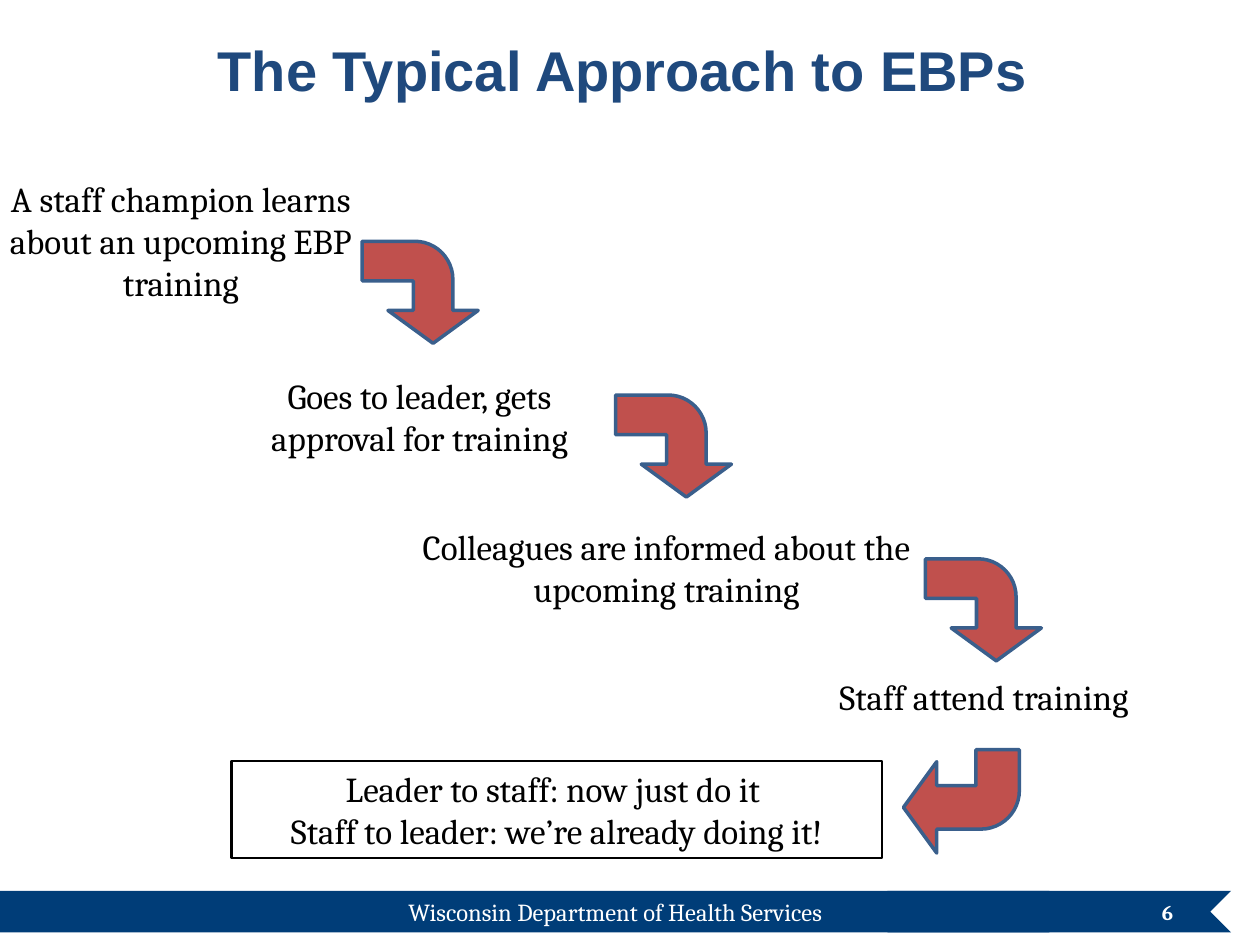
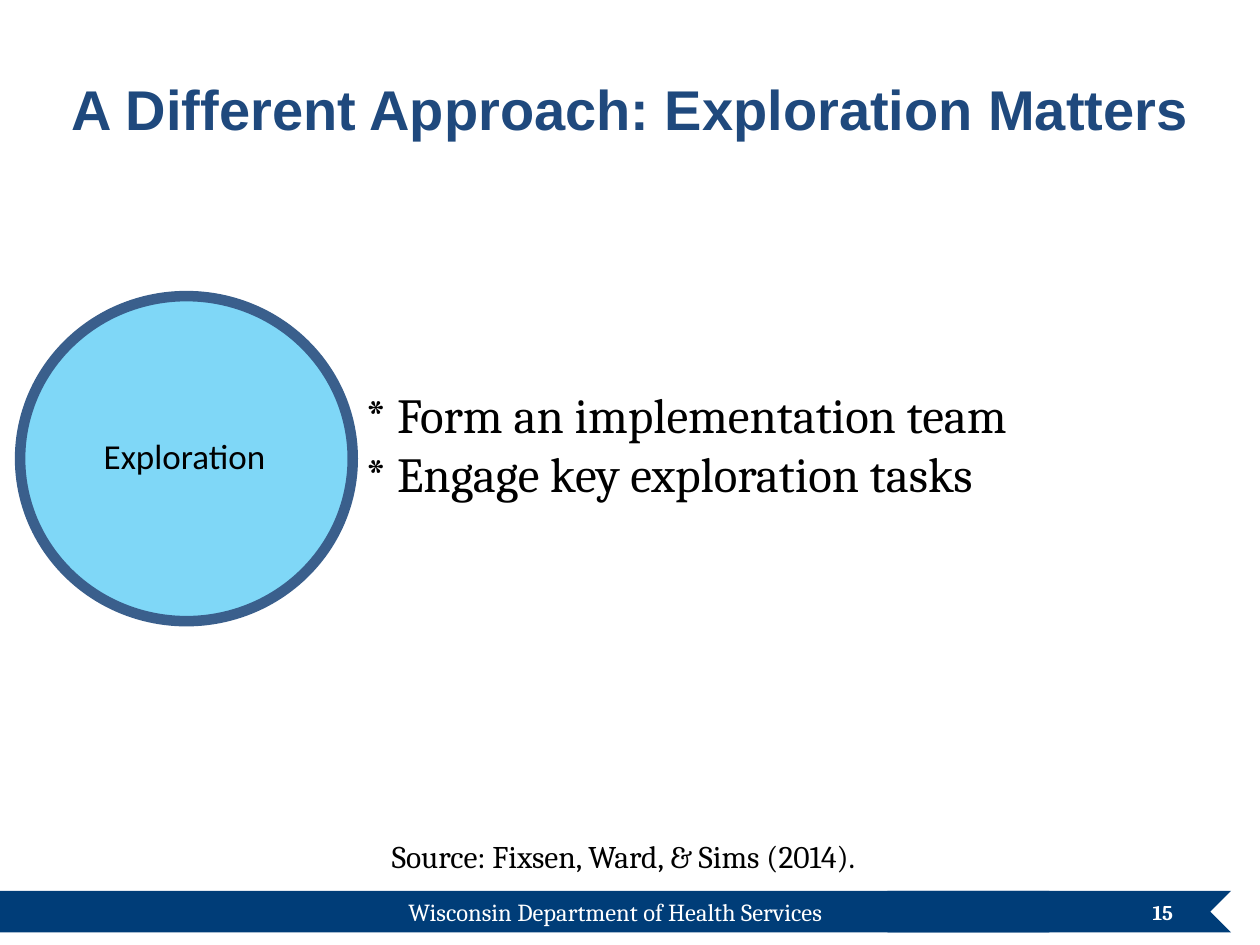
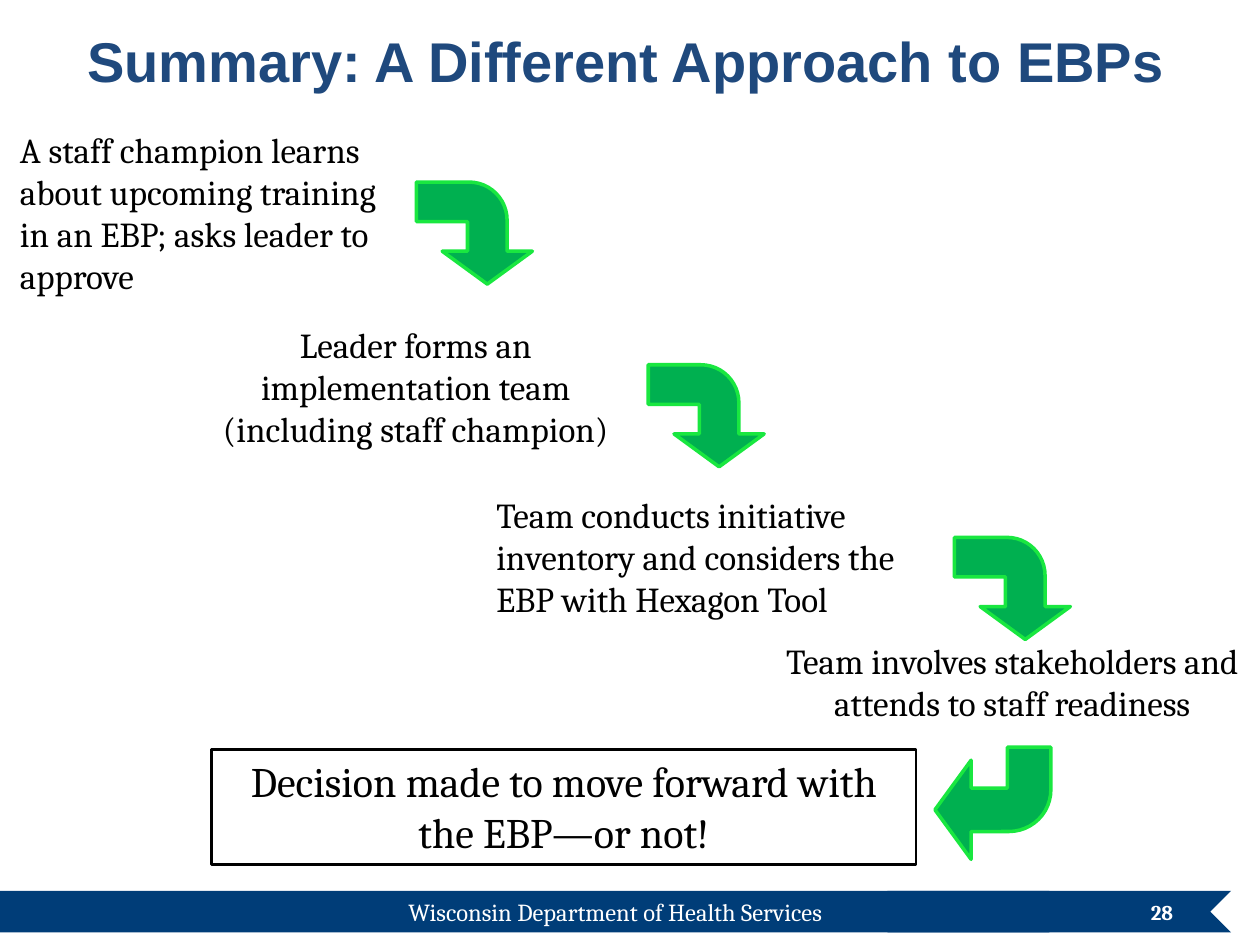
import collections

import lxml.etree
import pptx
import pptx.dml.color
import pptx.enum.shapes
import pptx.enum.text
import pptx.oxml.ns
import pptx.util

Inches = pptx.util.Inches
Shape = pptx.enum.shapes.MSO_SHAPE
Align = pptx.enum.text.PP_ALIGN
Anchor = pptx.enum.text.MSO_ANCHOR
AutoSize = pptx.enum.text.MSO_AUTO_SIZE

Box = collections.namedtuple("Box", "left top width height")
Step = collections.namedtuple("Step", "text box align")
Palette = collections.namedtuple("Palette", "fill line")

NAVY, TITLE_BLUE, STEEL = "003D78", "1F497D", "3A5F8C"
SKY, WHITE, BLACK = "00B0F0", "FFFFFF", "000000"
RED_ARROWS = Palette("C0504D", STEEL)
GREEN_ARROWS = Palette("00B050", "19E740")
SLIDE_BOX = Box(0, 0, 10, 7.5)
FOOTER_BOX = Box(0, 7.07, 9.77, 0.33)
TITLE_ONLY, TITLE_AND_BODY = 5, 1
DOWN_ARROW = (0.81, 0.92)


def rgb(code):
    """Turn a hex string into a colour."""
    return pptx.dml.color.RGBColor.from_string(code)


def inside(outer, left, top, width, height):
    """Return a box placed relative to the corner of another."""
    return Box(outer.left + left, outer.top + top, width, height)


def emu(box):
    """Convert a box in inches to lengths."""
    return [Inches(value) for value in box]


def write(shape, text, *, size=20, font="Cambria", color=BLACK, bold=False,
          align=Align.CENTER, anchor=Anchor.TOP, grow=True, spacing=None,
          margins=(0.1, 0.05)):
    """Fill a shape with formatted text, one paragraph a line."""
    frame = shape.text_frame
    frame.text = text
    frame.word_wrap = True
    frame.vertical_anchor = anchor
    frame.auto_size = AutoSize.SHAPE_TO_FIT_TEXT if grow else AutoSize.NONE
    frame.margin_left = frame.margin_right = Inches(margins[0])
    frame.margin_top = frame.margin_bottom = Inches(margins[1])
    for paragraph in frame.paragraphs:
        paragraph.alignment = align
        paragraph.space_before = pptx.util.Pt(0)
        paragraph.line_spacing = spacing
        for run in paragraph.runs:
            run.font.name = font
            run.font.size = pptx.util.Pt(size)
            run.font.bold = bold
            run.font.color.rgb = rgb(color)


def add_text(slide, box, text, **style):
    """Add a text box."""
    write(slide.shapes.add_textbox(*emu(box)), text, **style)


def add_figure(slide, kind, box, fill=None, line=None, weight=2, rotation=0):
    """Add a flat preset shape."""
    figure = slide.shapes.add_shape(kind, *emu(box))
    figure.shadow.inherit = False
    figure.rotation = rotation
    if fill:
        figure.fill.solid()
        figure.fill.fore_color.rgb = rgb(fill)
    else:
        figure.fill.background()
    if line:
        figure.line.color.rgb = rgb(line)
        figure.line.width = pptx.util.Pt(weight)
    else:
        figure.line.fill.background()
    return figure


def set_opacity(figure, percent):
    """Make the solid fill of a shape translucent."""
    qn = pptx.oxml.ns.qn
    color = figure._element.spPr.find(qn("a:solidFill")).find(qn("a:srgbClr"))
    lxml.etree.SubElement(color, qn("a:alpha"), val=str(percent * 1000))


def add_bent_arrow(slide, box, palette, rotation, thickness=0.388):
    """Add a bent arrow that leads to the next step."""
    arrow = add_figure(slide, Shape.BENT_ARROW, box, *palette, rotation=rotation)
    for index, value in enumerate((thickness, 0.442, 0.322, 0.373)):
        arrow.adjustments[index] = value


def add_footer(slide, box, number):
    """Draw the ribbon with the department and slide number."""
    add_figure(slide, Shape.CHEVRON, inside(box, 6.88, 0, 2.89, box.height),
               NAVY, rotation=180)
    add_figure(slide, Shape.RECTANGLE, inside(box, -0.33, 0, 8.66, box.height), NAVY)
    add_text(slide, box, "Wisconsin Department of Health Services",
             size=14, color=WHITE)
    add_text(slide, inside(box, 7.08, -0.03, 2.33, 0.4), str(number), size=12,
             color=WHITE, bold=True, align=Align.RIGHT, anchor=Anchor.MIDDLE,
             grow=False)


def start_slide(deck, layout, title, title_box, number):
    """Add a slide with its title and footer."""
    slide = deck.slides.add_slide(deck.slide_layouts[layout])
    heading = slide.shapes.title
    heading.left, heading.top, heading.width, heading.height = emu(title_box)
    write(heading, title, size=32, font="Arial", color=TITLE_BLUE, bold=True,
          grow=False)
    add_footer(slide, FOOTER_BOX, number)
    return slide


def add_staircase(slide, box, steps, arrow_corners, palette):
    """Place descending steps with the arrows between them."""
    for step in steps:
        add_text(slide, inside(box, *step.box), step.text, align=step.align)
    for corner in arrow_corners:
        add_bent_arrow(slide, inside(box, *corner, *DOWN_ARROW), palette, 90)


def add_outcome(slide, box, text, arrow_box, palette, size=20, thickness=0.388):
    """Draw the framed outcome and the arrow that points back to it."""
    frame = add_figure(slide, Shape.RECTANGLE, box, line=BLACK, weight=1.5)
    write(frame, text, size=size)
    add_bent_arrow(slide, inside(box, *arrow_box), palette, 180, thickness)


def add_stage(slide, box, name):
    """Draw a ringed translucent disc with the name of a stage."""
    disc = add_figure(slide, Shape.OVAL, inside(box, 0.02, 0, 2.63, 2.63), SKY, WHITE)
    set_opacity(disc, 50)
    add_text(slide, inside(box, 0.34, 0.41, 1.93, 1.86), name, font="Calibri",
             anchor=Anchor.MIDDLE, grow=False, spacing=0.9, margins=(0.14, 0.03))
    add_figure(slide, Shape.OVAL, inside(box, 0, 0.05, 2.64, 2.58),
               line=STEEL, weight=6)


def add_tasks(slide, box, tasks):
    """Fill the body placeholder with the tasks, without bullets."""
    body = slide.placeholders[1]
    body.left, body.top, body.width, body.height = emu(box)
    write(body, "\n".join(tasks), size=28, align=Align.LEFT)
    for paragraph in body.text_frame.paragraphs:
        properties = paragraph._p.get_or_add_pPr()
        properties.set("marL", "0")
        properties.set("indent", "0")
        lxml.etree.SubElement(properties, pptx.oxml.ns.qn("a:buNone"))


def build_typical(deck):
    """Build the slide on the typical approach."""
    slide = start_slide(deck, TITLE_ONLY, "The Typical Approach to EBPs ",
                        Box(0.42, 0.23, 9.17, 1.1), 6)
    steps = [
        Step("A staff champion learns about an upcoming EBP training",
             Box(-0.17, 0, 3.21, 1.45), Align.CENTER),
        Step("Goes to leader, gets approval for training",
             Box(1.81, 1.56, 3.04, 0.77), Align.CENTER),
        Step("Colleagues are informed about the upcoming training",
             Box(3.25, 2.76, 4.08, 0.77), Align.CENTER),
        Step("Staff attend training", Box(6.27, 3.95, 3.08, 0.44), Align.CENTER),
    ]
    add_staircase(slide, Box(0, 1.36, 10, 4.39), steps,
                  [(2.93, 0.5), (4.94, 1.72), (7.4, 3.02)], RED_ARROWS)
    add_outcome(slide, Box(1.84, 6.04, 5.16, 0.77),
                "Leader to staff: now just do it \n"
                "Staff to leader: we’re already doing it!",
                Box(5.33, -0.09, 0.92, 0.82), RED_ARROWS, thickness=0.421)


def build_exploration(deck):
    """Build the slide on the exploration stage."""
    slide = start_slide(deck, TITLE_AND_BODY,
                        "A Different Approach: Exploration Matters",
                        Box(0.17, 0.54, 9.67, 1.2), 15)
    add_tasks(slide, Box(2.8, 3, 7.22, 1.04),
              ["* Form an implementation team", "* Engage key exploration tasks"])
    add_text(slide, inside(SLIDE_BOX, 0.88, 6.59, 8.24, 0.4),
             "Source: Fixsen, Ward, & Sims (2014).  ", size=18)
    add_stage(slide, Box(0.16, 2.3, 2.65, 2.63), "Exploration")


def build_summary(deck):
    """Build the slide that sums up the different approach."""
    slide = start_slide(deck, TITLE_ONLY, "Summary: A Different Approach to EBPs ",
                        Box(0.02, 0.16, 10.02, 0.67), 28)
    steps = [
        Step("A staff champion learns about upcoming training in an EBP; "
             "asks leader to approve", Box(0.06, 0, 3.19, 1.45), Align.LEFT),
        Step("Leader forms an implementation team (including staff champion)",
             Box(1.49, 1.55, 3.62, 1.11), Align.CENTER),
        Step("Team conducts initiative inventory and considers the EBP "
             "with Hexagon Tool", Box(3.84, 2.9, 3.75, 1.11), Align.LEFT),
        Step("Team involves stakeholders and attends to staff readiness",
             Box(6.01, 4.06, 4.05, 0.77), Align.CENTER),
    ]
    add_staircase(slide, Box(0, 0.97, 10, 4.83), steps,
                  [(3.36, 0.42), (5.2, 1.87), (7.63, 3.24)], GREEN_ARROWS)
    add_outcome(slide, Box(1.68, 5.95, 5.59, 0.91),
                "Decision made to move forward with the EBP—or not!",
                Box(5.74, -0.02, 0.92, 0.89), GREEN_ARROWS, size=24)


def main():
    """Build and save the deck."""
    deck = pptx.Presentation()
    deck.slide_width = Inches(SLIDE_BOX.width)
    deck.slide_height = Inches(SLIDE_BOX.height)
    build_typical(deck)
    build_exploration(deck)
    build_summary(deck)
    deck.save("out.pptx")


if __name__ == "__main__":
    main()
